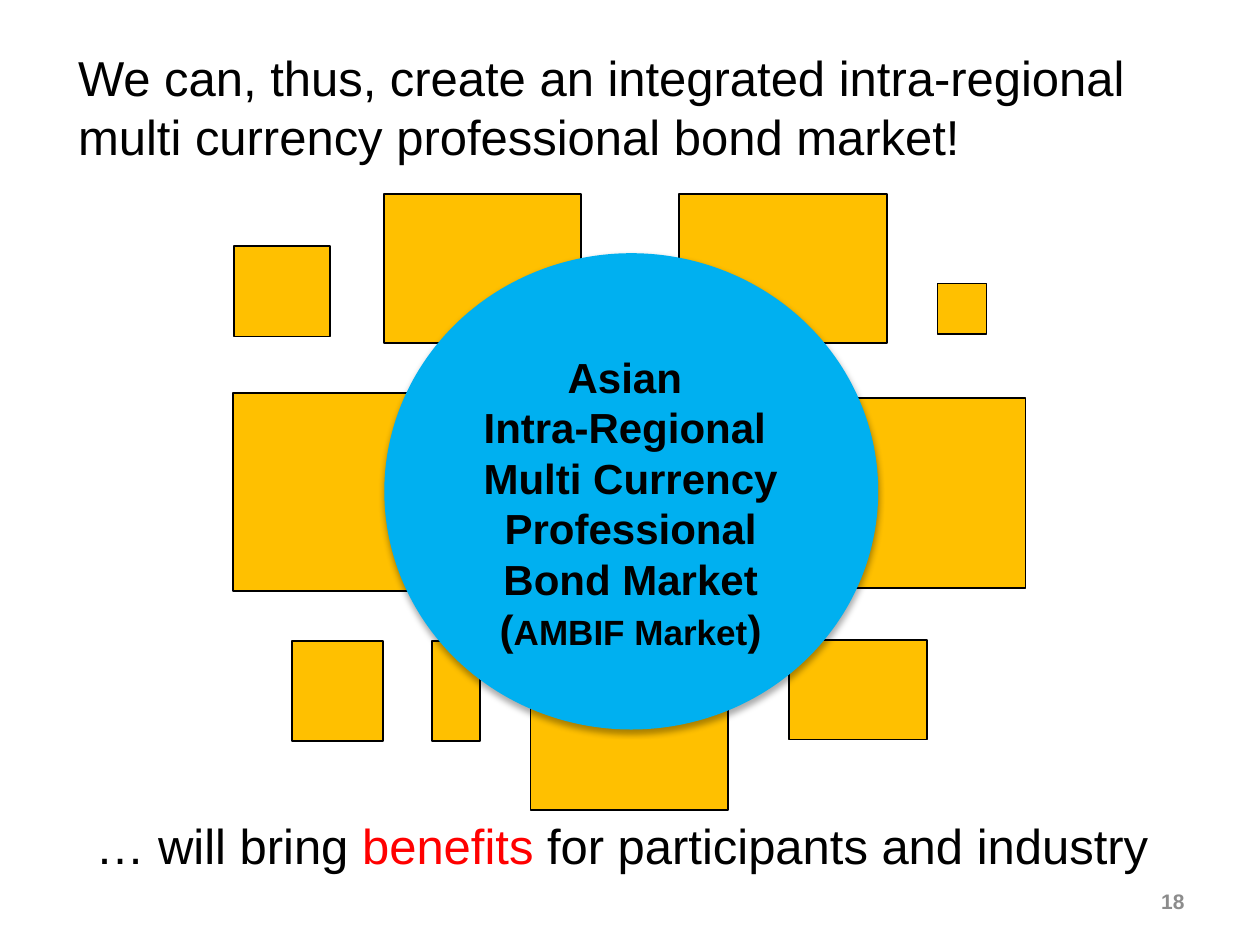
import pptx
import pptx.util
import pptx.dml.color
import pptx.enum.shapes
import pptx.enum.text
import lxml.etree

Inches, Pt = pptx.util.Inches, pptx.util.Pt
Shape = pptx.enum.shapes.MSO_SHAPE
Align = pptx.enum.text.PP_ALIGN
Anchor = pptx.enum.text.MSO_ANCHOR


def color(code):
    return pptx.dml.color.RGBColor.from_string(code)


def write(box, paras, size=28, bold=False, align=Align.LEFT, anchor=Anchor.TOP):
    """Fill a box with paragraphs; each run is (text, format overrides)."""
    frame = box.text_frame
    frame.word_wrap = True
    frame.auto_size = pptx.enum.text.MSO_AUTO_SIZE.NONE
    frame.vertical_anchor = anchor
    for i, runs in enumerate(paras):
        para = frame.paragraphs[0] if i == 0 else frame.add_paragraph()
        para.alignment = align
        for text, look in runs:
            for j, line in enumerate(text.split("\n")):
                if j:
                    para.add_line_break()
                run = para.add_run()
                run.text = line
                font = run.font
                font.name = "Arial"
                font.size = Pt(look.get("size", size))
                font.bold = bold
                font.color.rgb = color(look.get("fill", "000000"))


deck = pptx.Presentation()
deck.slide_width, deck.slide_height = Inches(10), Inches(7.5)
slide = deck.slides.add_slide(deck.slide_layouts[5])

# Title
title = slide.shapes.title
title.left, title.top = Inches(0.52), Inches(0.33)
title.width, title.height = Inches(8.94), Inches(1.04)
write(title, [[("We can, thus, create an integrated intra-regional \n"
                "multi currency professional bond market!", {})]])

# National markets, sized by weight
group = slide.shapes.add_group_shape()
markets = [
    (3.05, 1.54, 1.56, 1.18),
    (5.39, 1.54, 1.65, 1.18),
    (1.85, 3.12, 1.57, 1.57),
    (4.21, 5.09, 1.57, 1.34),
    (7.44, 2.25, 0.39, 0.4),
    (2.32, 5.09, 0.72, 0.79),
    (3.43, 5.09, 0.38, 0.79),
    (6.26, 5.08, 1.1, 0.79),
    (6.57, 3.16, 1.57, 1.51),
    (1.86, 1.95, 0.76, 0.72),
]
for place in markets:
    market = group.shapes.add_shape(Shape.RECTANGLE, *map(Inches, place))
    market.shadow.inherit = False
    market.fill.solid()
    market.fill.fore_color.rgb = color("FFC000")
    market.line.color.rgb = color("000000")
    market.line.width = Pt(1)

# Common market circle with a soft shadow
circle = group.shapes.add_shape(
    Shape.OVAL, Inches(3.05), Inches(2.01), Inches(3.92), Inches(3.78))
circle.fill.solid()
circle.fill.fore_color.rgb = color("00B0F0")
circle.line.fill.background()
circle.shadow.inherit = False
space = "http://schemas.openxmlformats.org/drawingml/2006/main"
effects = circle.element.spPr.find(f"{{{space}}}effectLst")
effects.append(lxml.etree.fromstring(
    f'<a:outerShdw xmlns:a="{space}" blurRad="{Pt(3.5)}" dist="{Pt(2.2)}" '
    'dir="5400000" rotWithShape="0"><a:srgbClr val="000000">'
    '<a:alpha val="32000"/></a:srgbClr></a:outerShdw>'))

# Circle label
label = group.shapes.add_textbox(
    Inches(3.51), Inches(2.74), Inches(2.99), Inches(2.52))
write(label, [
    [("Asian ", {})],
    [("Intra-Regional ", {})],
    [("Multi Currency Professional Bond Market", {})],
    [("(", {}), ("AMBIF Market", {"size": 20}), (")", {})],
], size=24, bold=True, align=Align.CENTER)

# Closing line
close = slide.shapes.add_textbox(
    Inches(0.11), Inches(6.42), Inches(9.76), Inches(0.57))
write(close, [[("… will bring ", {}), ("benefits", {"fill": "FF0000"}),
               (" for participants and industry ", {})]], align=Align.CENTER)

# Page number
page = slide.shapes.add_textbox(
    Inches(7.17), Inches(6.95), Inches(2.33), Inches(0.4))
write(page, [[("18", {"fill": "8C8C8C"})]], size=12, bold=True,
      align=Align.RIGHT, anchor=Anchor.MIDDLE)

deck.save("out.pptx")
